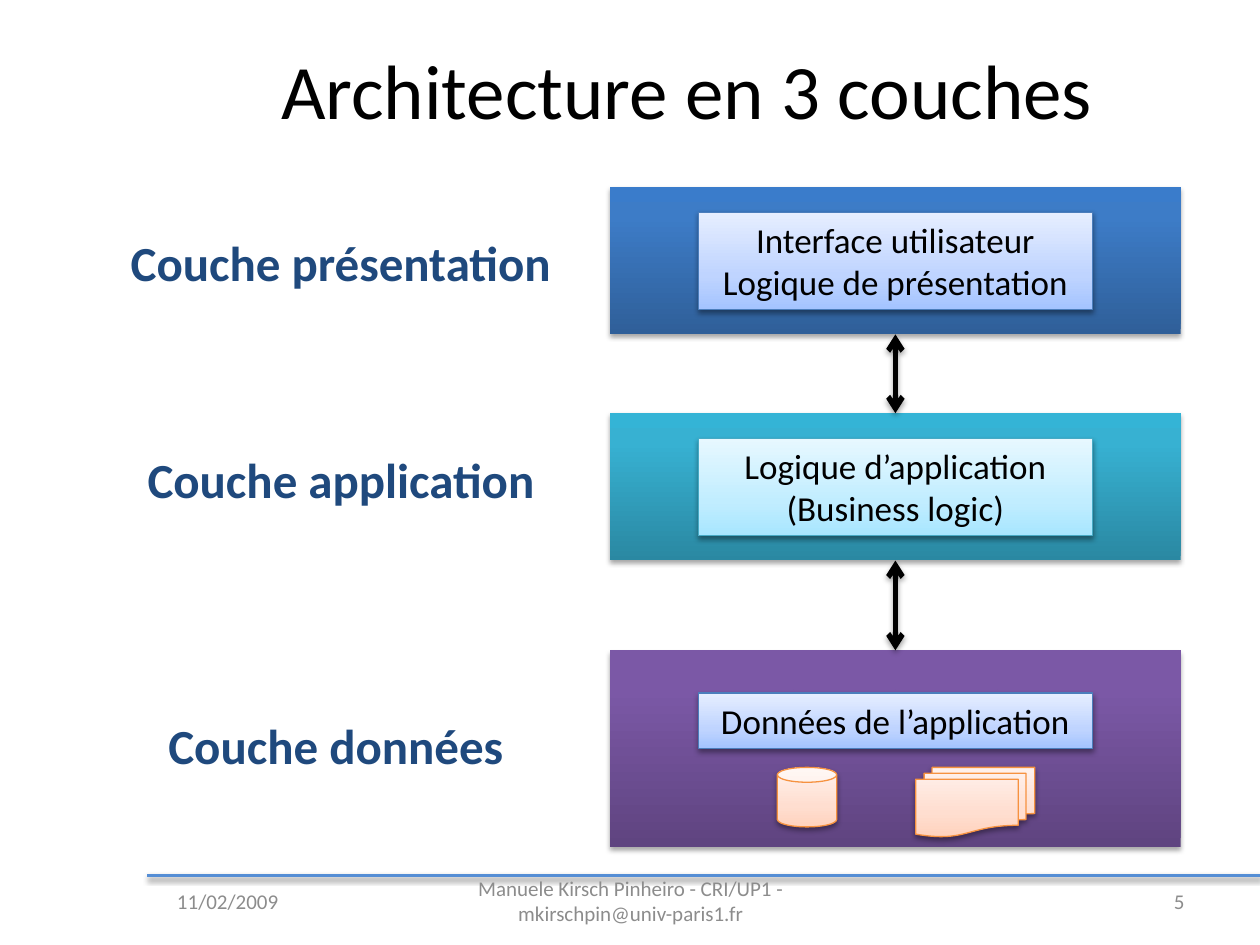
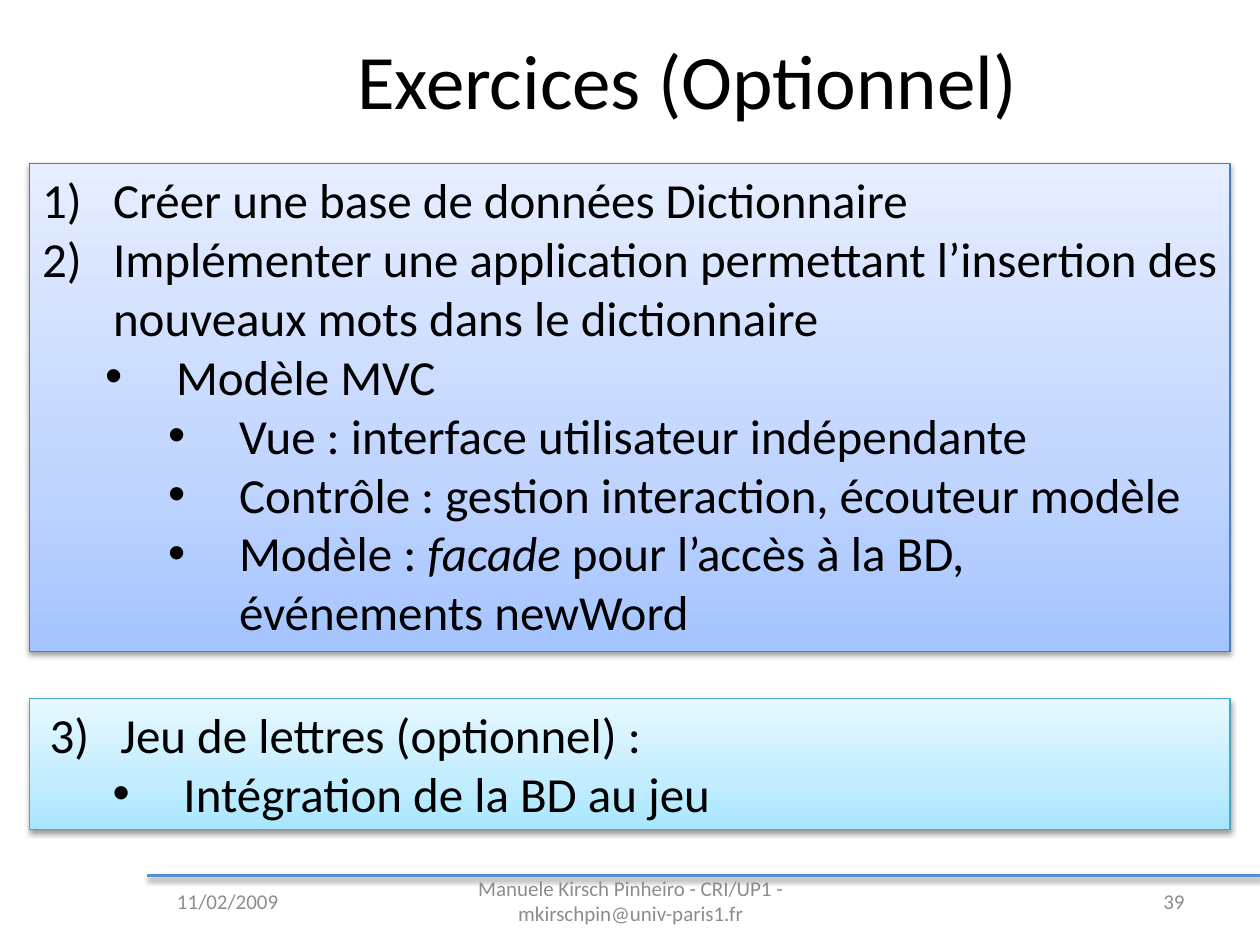
from lxml.etree import SubElement
from pptx import Presentation
from pptx.dml.color import RGBColor
from pptx.enum.shapes import MSO_CONNECTOR, MSO_SHAPE as Preset
from pptx.enum.text import MSO_ANCHOR as Anchor, MSO_AUTO_SIZE as AutoSize, PP_ALIGN as Align
from pptx.oxml.ns import qn
from pptx.util import Cm, Pt

FONT = "Calibri"
BLACK = RGBColor(0x00, 0x00, 0x00)
WHITE = RGBColor(0xFF, 0xFF, 0xFF)
GREY = RGBColor(0x8C, 0x8C, 0x8C)
NAVY = RGBColor(0x1F, 0x49, 0x7D)
RULE_BLUE = RGBColor(0x55, 0x8E, 0xD5)
BLUE_EDGE = RGBColor(0x4B, 0x7E, 0xBC)
CYAN_EDGE = RGBColor(0x46, 0xAA, 0xC5)
ORANGE_EDGE = RGBColor(0xF6, 0x92, 0x40)

# Gradients run from bottom to top: (position in %, colour)
DEEP_BLUE = [(0, RGBColor(0x2F, 0x5F, 0x99)), (80, RGBColor(0x3D, 0x7C, 0xC7)),
             (100, RGBColor(0x3A, 0x7C, 0xCB))]
DEEP_CYAN = [(0, RGBColor(0x2A, 0x88, 0xA2)), (80, RGBColor(0x37, 0xB1, 0xD2)),
             (100, RGBColor(0x34, 0xB4, 0xD6))]
DEEP_PURPLE = [(0, RGBColor(0x5F, 0x44, 0x80)), (80, RGBColor(0x7B, 0x58, 0xA6)),
               (100, RGBColor(0x7C, 0x57, 0xA8))]
PALE_BLUE = [(0, RGBColor(0xA4, 0xC4, 0xFF)), (35, RGBColor(0xBF, 0xD4, 0xFF)),
             (100, RGBColor(0xE6, 0xEE, 0xFF))]
PALE_CYAN = [(0, RGBColor(0xA7, 0xE6, 0xFF)), (35, RGBColor(0xC1, 0xED, 0xFF)),
             (100, RGBColor(0xE7, 0xF8, 0xFF))]
PALE_ORANGE = [(0, RGBColor(0xFF, 0xD2, 0xBD)), (35, RGBColor(0xFF, 0xDE, 0xD0)),
               (100, RGBColor(0xFF, 0xF2, 0xED))]

BLUE_BOX = (PALE_BLUE, BLUE_EDGE)
CYAN_BOX = (PALE_CYAN, CYAN_EDGE)
ORANGE_BOX = (PALE_ORANGE, ORANGE_EDGE)

# Shadows: opacity in %, distance in points
SOFT_SHADOW = (38, 1.6)
STRONG_SHADOW = (35, 1.8)

DATE = "11/02/2009"
AUTHOR = "Manuele Kirsch Pinheiro - CRI/UP1 - mkirschpin@univ-paris1.fr"

# Lengths in cm
SLIDE_WIDTH, SLIDE_HEIGHT = 25.4, 19.05
RULE_LEFT, FOOTER_TOP, FOOTER_HEIGHT = 2.97, 17.65, 1.02
BAND_LEFT, BAND_WIDTH, CONTENT_WIDTH = 12.3, 11.5, 7.95
LABEL_CENTRE, LABEL_HEIGHT = 6.93, 1.45
EXERCISE_LEFT, EXERCISE_WIDTH = 0.6, 24.2
HANGING, LEVEL_STEP = 1.43, 1.27

LAYERS = [
    dict(label="Couche présentation", label_top=4.57, label_width=9.09,
         top=3.77, height=2.97, gradient=DEEP_BLUE, style=BLUE_BOX,
         content=["Interface utilisateur", "Logique de présentation"],
         content_top=4.28, content_height=1.96),
    dict(label="Couche application", label_top=8.94, label_width=8.41,
         top=8.33, height=2.97, gradient=DEEP_CYAN, style=CYAN_BOX,
         content=["Logique d’application", "(Business logic)"],
         content_top=8.84, content_height=1.96),
    dict(label="Couche données", label_top=14.3, label_width=7.57,
         top=13.11, height=3.96, gradient=DEEP_PURPLE, style=BLUE_BOX,
         content=["Données de l’application"],
         content_top=13.97, content_height=1.12),
]

STORES = [(Preset.CAN, (15.67, 15.47, 1.2, 1.2)),
          (Preset.FLOWCHART_MULTIDOCUMENT, (18.46, 15.47, 2.4, 1.4))]

# Items: (level, text); level 0 is numbered and *stars* enclose italics
EXERCISES = [
    dict(top=3.3, height=9.83, style=BLUE_BOX, start=1, indent=1.43, items=[
        (0, "Créer une base de données Dictionnaire"),
        (0, "Implémenter une application permettant l’insertion des "
            "nouveaux mots dans le dictionnaire"),
        (1, "Modèle MVC"),
        (2, "Vue : interface utilisateur indépendante"),
        (2, "Contrôle : gestion interaction, écouteur modèle"),
        (2, "Modèle : *facade* pour l’accès à la BD, événements newWord"),
    ]),
    dict(top=14.08, height=2.65, style=CYAN_BOX, start=3, indent=1.58, items=[
        (0, "Jeu de lettres (optionnel) :"),
        (1, "Intégration de la BD au jeu"),
    ]),
]


def cm_all(lengths):
    return [Cm(length) for length in lengths]


def add_shadow(part, shadow):
    """Give a shape or connector a downward shadow, after its fill and line."""
    opacity, distance = shadow
    effects = SubElement(part._element.spPr, qn("a:effectLst"))
    outer = SubElement(effects, qn("a:outerShdw"), blurRad=str(Pt(3.1)),
                       dist=str(Pt(distance)), dir="5400000", rotWithShape="0")
    tint = SubElement(outer, qn("a:srgbClr"), val=str(BLACK))
    SubElement(tint, qn("a:alpha"), val=str(opacity * 1000))


def fill_gradient(shape, stops):
    shape.fill.gradient()
    shape.fill.gradient_angle = 90
    stop_list = shape._element.spPr.find(qn("a:gradFill")).find(qn("a:gsLst"))
    stop_list.clear()
    for position, color in stops:
        stop = SubElement(stop_list, qn("a:gs"), pos=str(position * 1000))
        SubElement(stop, qn("a:srgbClr"), val=str(color))


def add_block(slide, preset, box, gradient, edge=None, shadow=SOFT_SHADOW):
    block = slide.shapes.add_shape(preset, *cm_all(box))
    fill_gradient(block, gradient)
    if edge is None:
        block.line.fill.background()
    else:
        block.line.color.rgb = edge
        block.line.width = Pt(0.75)
    add_shadow(block, shadow)
    return block


def add_line(slide, ends, color, width, shadow, arrows=False):
    line = slide.shapes.add_connector(MSO_CONNECTOR.STRAIGHT, *cm_all(ends))
    line.line.color.rgb = color
    line.line.width = Pt(width)
    if arrows:
        outline = line.line._get_or_add_ln()
        for end in ("a:headEnd", "a:tailEnd"):
            SubElement(outline, qn(end), type="arrow")
    add_shadow(line, shadow)
    return line


def format_text(frame, size, color=BLACK, align=Align.LEFT, anchor=Anchor.TOP, bold=None):
    frame.vertical_anchor = anchor
    for paragraph in frame.paragraphs:
        paragraph.alignment = align
        for run in paragraph.runs:
            font = run.font
            font.name, font.size, font.bold = FONT, Pt(size), bold
            font.color.rgb = color


def add_page(deck, title, title_top, number):
    """Add a slide with the shared rule, title and footer."""
    slide = deck.slides.add_slide(deck.slide_layouts[5])
    add_line(slide, (RULE_LEFT, FOOTER_TOP, SLIDE_WIDTH, FOOTER_TOP),
             RULE_BLUE, 2, SOFT_SHADOW)
    heading = slide.shapes.title
    heading.left, heading.top, heading.width, heading.height = cm_all(
        (3.58, title_top, 20.55, 3.18))
    heading.text_frame.text = title
    format_text(heading.text_frame, 44, align=Align.CENTER, anchor=Anchor.MIDDLE)
    for text, left, width, align in [(DATE, 1.63, 5.92, Align.CENTER),
                                     (AUTHOR, 8.69, 8.05, Align.CENTER),
                                     (str(number), 18.21, 5.92, Align.RIGHT)]:
        frame = slide.shapes.add_textbox(
            *cm_all((left, FOOTER_TOP, width, FOOTER_HEIGHT))).text_frame
        frame.word_wrap = True
        frame.text = text
        format_text(frame, 12, GREY, align, Anchor.MIDDLE)
    return slide


def add_layer(slide, layer):
    """Draw one layer with its label and return its band."""
    band = add_block(slide, Preset.RECTANGLE,
                     (BAND_LEFT, layer["top"], BAND_WIDTH, layer["height"]),
                     layer["gradient"], shadow=STRONG_SHADOW)
    content_left = BAND_LEFT + (BAND_WIDTH - CONTENT_WIDTH) / 2
    content = add_block(slide, Preset.RECTANGLE,
                        (content_left, layer["content_top"], CONTENT_WIDTH,
                         layer["content_height"]), *layer["style"]).text_frame
    content.text = "\n".join(layer["content"])
    content.auto_size = AutoSize.SHAPE_TO_FIT_TEXT
    format_text(content, 20, align=Align.CENTER)

    width = layer["label_width"]
    label = slide.shapes.add_textbox(*cm_all(
        (LABEL_CENTRE - width / 2, layer["label_top"], width, LABEL_HEIGHT)))
    label.fill.solid()
    label.fill.fore_color.rgb = WHITE
    label.text_frame.text = layer["label"]
    label.text_frame.word_wrap = False
    label.text_frame.auto_size = AutoSize.SHAPE_TO_FIT_TEXT
    format_text(label.text_frame, 28, NAVY, bold=True)
    return band


def add_bullet(paragraph, level, indent, start):
    paragraph.level = level
    properties = paragraph._p.get_or_add_pPr()
    properties.set("marL", str(Cm(indent + level * LEVEL_STEP)))
    properties.set("indent", str(-Cm(HANGING)))
    if level == 0:
        SubElement(properties, qn("a:buAutoNum"), type="arabicParenR", startAt=str(start))
    else:
        SubElement(properties, qn("a:buFont"), typeface="Arial")
        SubElement(properties, qn("a:buChar"), char="•")


def add_exercise(slide, exercise):
    frame = add_block(slide, Preset.RECTANGLE,
                      (EXERCISE_LEFT, exercise["top"], EXERCISE_WIDTH, exercise["height"]),
                      *exercise["style"]).text_frame
    frame.word_wrap = True
    frame.auto_size = AutoSize.SHAPE_TO_FIT_TEXT
    for index, (level, text) in enumerate(exercise["items"]):
        paragraph = frame.add_paragraph() if index else frame.paragraphs[0]
        add_bullet(paragraph, level, exercise["indent"], exercise["start"])
        for position, part in enumerate(text.split("*")):
            run = paragraph.add_run()
            run.text = part
            if position % 2:
                run.font.italic = True
    format_text(frame, 28)


def build_architecture(deck):
    slide = add_page(deck, "Architecture en 3 couches", 0.2, 5)
    bands = [add_layer(slide, layer) for layer in LAYERS]
    for preset, box in STORES:
        add_block(slide, preset, box, *ORANGE_BOX)
    for upper, lower in zip(bands, bands[1:]):
        arrow = add_line(slide, (0, 0, 0, 0), BLACK, 3, STRONG_SHADOW, arrows=True)
        arrow.begin_connect(upper, 2)
        arrow.end_connect(lower, 0)


def build_exercises(deck):
    slide = add_page(deck, "Exercices (Optionnel)", 0, 39)
    for exercise in EXERCISES:
        add_exercise(slide, exercise)


def main():
    deck = Presentation()
    deck.slide_width, deck.slide_height = Cm(SLIDE_WIDTH), Cm(SLIDE_HEIGHT)
    build_architecture(deck)
    build_exercises(deck)
    deck.save("out.pptx")


if __name__ == "__main__":
    main()
